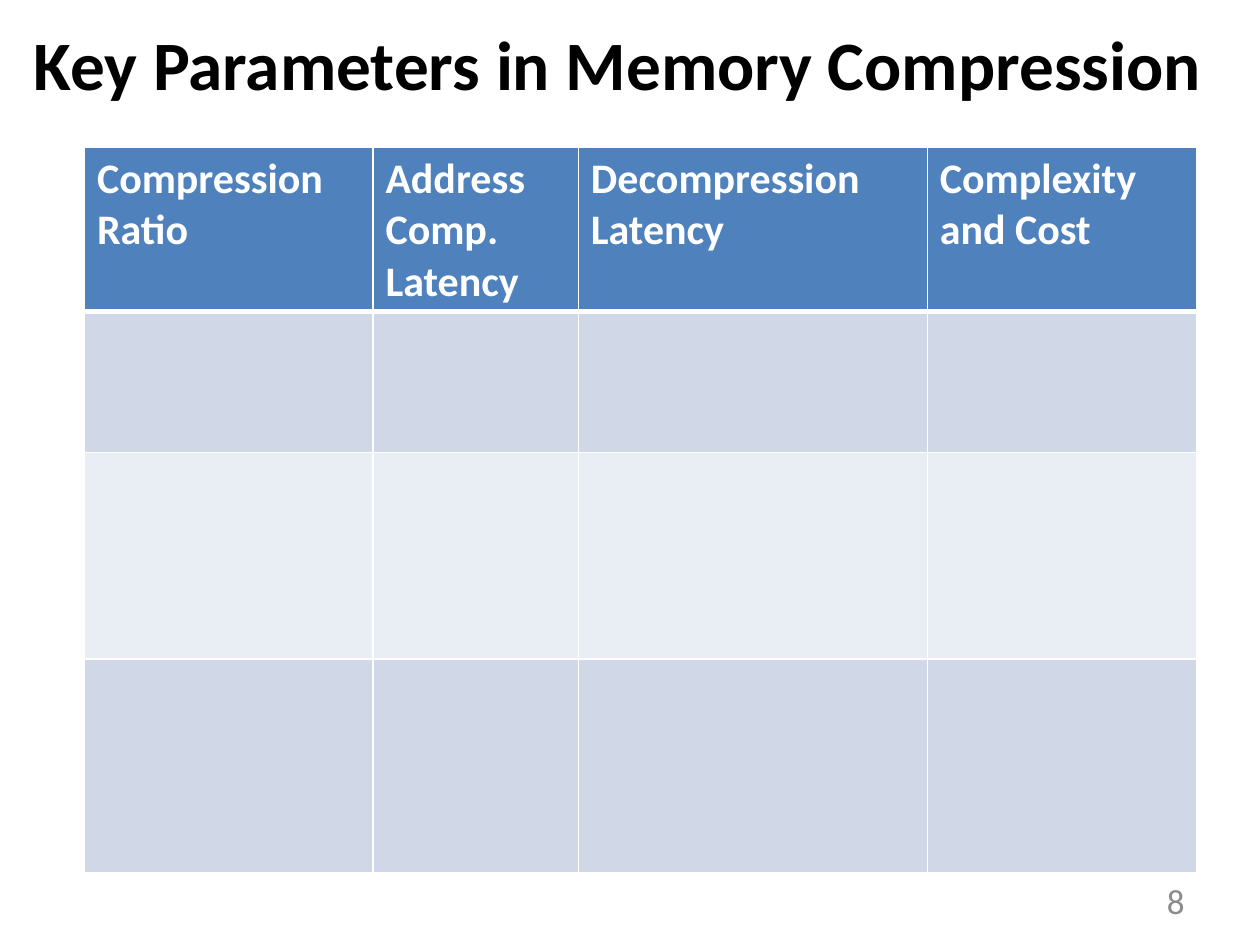
"""Build the slide on key parameters in memory compression."""
from dataclasses import dataclass

from lxml.etree import SubElement
from pptx import Presentation
from pptx.dml.color import RGBColor as RGB
from pptx.enum.text import MSO_ANCHOR as Anchor, PP_ALIGN as Align
from pptx.oxml.ns import qn
from pptx.util import Inches, Pt


@dataclass(frozen=True)
class Theme:
    font: str = "Calibri"
    title_size: float = 39.6
    header_size: float = 24
    number_size: float = 20
    ink: str = "000000"
    muted: str = "8C8C8C"
    white: str = "FFFFFF"
    header: str = "4F81BD"
    bands: tuple[str, str] = ("D0D8E8", "E9EDF4")
    rule: float = 1
    header_rule: float = 3


@dataclass(frozen=True)
class Label:
    text: str
    box: tuple[float, float, float, float]
    size: float
    color: str
    bold: bool = False
    align: Align = Align.LEFT


@dataclass(frozen=True)
class Column:
    heading: str
    width: float


THEME = Theme()
LABELS = (
    Label("Key Parameters in Memory Compression", (0.17, 0.08, 9.67, 0.83),
          THEME.title_size, THEME.ink, bold=True),
    Label("8", (7.17, 6.95, 2.33, 0.4), THEME.number_size, THEME.muted,
          align=Align.RIGHT),
)
COLUMNS = (
    Column("Compression\nRatio", 2.29),
    Column("Address Comp.\nLatency", 1.63),
    Column("Decompression Latency", 2.77),
    Column("Complexity\nand Cost", 2.14),
)
ROW_HEIGHTS = (1.3, 1.12, 1.64, 1.7)
TABLE_LEFT, TABLE_TOP = 0.67, 1.17


def style_paragraph(p, size: float, color: str, bold: bool) -> None:
    p.font.name = THEME.font
    p.font.size = Pt(size)
    p.font.bold = bold
    p.font.color.rgb = RGB.from_string(color)


def add_label(slide, label: Label) -> None:
    sp = slide.shapes.add_textbox(*map(Inches, label.box))
    tf = sp.text_frame
    tf.word_wrap = True
    tf.vertical_anchor = Anchor.MIDDLE
    p = tf.paragraphs[0]
    p.text = label.text
    p.alignment = label.align
    style_paragraph(p, label.size, label.color, label.bold)


def set_borders(cell, top: float, bottom: float) -> None:
    tc_pr = cell._tc.get_or_add_tcPr()
    widths = {"L": THEME.rule, "R": THEME.rule, "T": top, "B": bottom}
    for side, width in widths.items():
        ln = SubElement(tc_pr, qn(f"a:ln{side}"), w=str(Pt(width)))
        fill = SubElement(ln, qn("a:solidFill"))
        SubElement(fill, qn("a:srgbClr"), val=THEME.white)


def style_cell(cell, row: int) -> None:
    set_borders(cell,
                top=THEME.header_rule if row == 1 else THEME.rule,
                bottom=THEME.header_rule if row == 0 else THEME.rule)
    color = THEME.bands[(row - 1) % 2] if row else THEME.header
    cell.fill.solid()
    cell.fill.fore_color.rgb = RGB.from_string(color)


def add_parameter_table(slide) -> None:
    width = sum(column.width for column in COLUMNS)
    table = slide.shapes.add_table(
        len(ROW_HEIGHTS), len(COLUMNS), Inches(TABLE_LEFT), Inches(TABLE_TOP),
        Inches(width), Inches(sum(ROW_HEIGHTS))).table
    for row, height in enumerate(ROW_HEIGHTS):
        table.rows[row].height = Inches(height)
        for cell in table.rows[row].cells:
            style_cell(cell, row)
    for i, column in enumerate(COLUMNS):
        table.columns[i].width = Inches(column.width)
        tf = table.cell(0, i).text_frame
        tf.text = column.heading
        for p in tf.paragraphs:
            style_paragraph(p, THEME.header_size, THEME.white, bold=True)


def main() -> None:
    prs = Presentation()
    prs.slide_width, prs.slide_height = Inches(10), Inches(7.5)
    slide = prs.slides.add_slide(prs.slide_layouts[6])
    for label in LABELS:
        add_label(slide, label)
    add_parameter_table(slide)
    prs.save("out.pptx")


if __name__ == "__main__":
    main()
